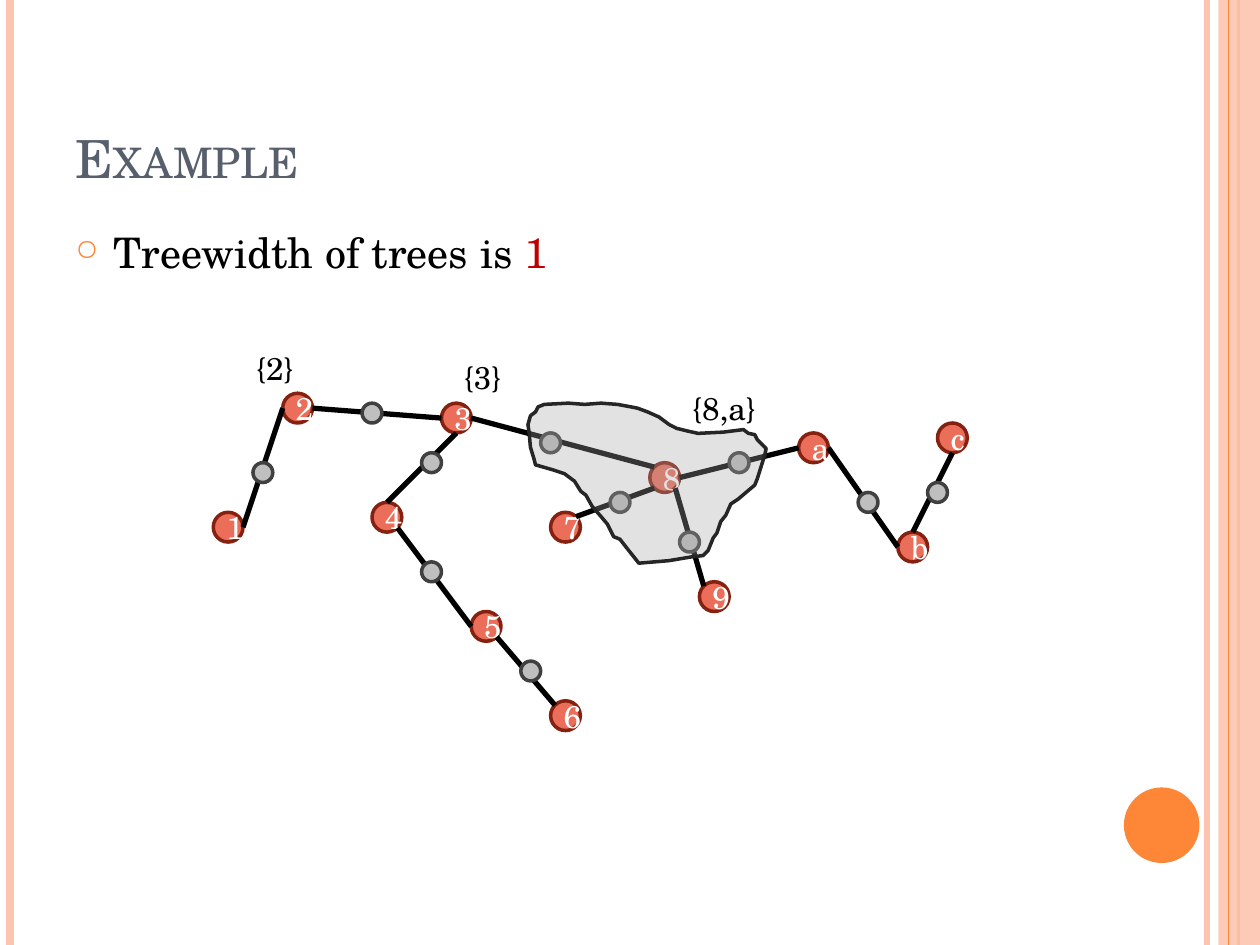
import math
import pptx
import pptx.util
import pptx.dml.color
import pptx.enum.shapes
import pptx.enum.text
import pptx.oxml
import pptx.oxml.ns
from lxml import etree

RGB = pptx.dml.color.RGBColor
PINK = RGB(0xFE, 0xC3, 0xAE)
ORANGE = RGB(0xFE, 0x86, 0x37)
SLATE = RGB(0x57, 0x5F, 0x6D)
CORAL = RGB(0xEB, 0x6E, 0x5A)
MAROON = RGB(0x86, 0x21, 0x10)
RED = RGB(0xC0, 0x00, 0x00)
SILVER = RGB(0xBF, 0xBF, 0xBF)
GREY = RGB(0xA6, 0xA6, 0xA6)
DARK = RGB(0x40, 0x40, 0x40)
INK = RGB(0x26, 0x26, 0x26)
BLACK = RGB(0, 0, 0)
WHITE = RGB(0xFF, 0xFF, 0xFF)
FONT = "TeX Gyre Schola"
MSO = pptx.enum.shapes.MSO_SHAPE
ANCHOR = pptx.enum.text.MSO_ANCHOR
ALIGN = pptx.enum.text.PP_ALIGN
qn = pptx.oxml.ns.qn

prs = pptx.Presentation()
prs.slide_width = W = pptx.util.Inches(10)
prs.slide_height = H = pptx.util.Inches(7.5)
s = prs.slides.add_slide(prs.slide_layouts[6])
GRID = pptx.util.Cm(0.2)
ROW_SHIFT = 0.14


def paint(sp, fill, line, width, alpha=100):
    sp.shadow.inherit = False
    sp.fill.solid()
    sp.fill.fore_color.rgb = fill
    if alpha < 100:
        clr = sp.fill._xPr.find(qn("a:solidFill"))[0]
        etree.SubElement(clr, qn("a:alpha"), val=str(alpha * 1000))
    if line is None:
        sp.line.fill.background()
    else:
        sp.line.color.rgb = line
        sp.line.width = pptx.util.Pt(width)
    return sp


def connect(x1, y1, x2, y2, color, width):
    cx = s.shapes.add_connector(pptx.enum.shapes.MSO_CONNECTOR.STRAIGHT,
                                round(x1), round(y1), round(x2), round(y2))
    cx.line.color.rgb = color
    cx.line.width = pptx.util.Pt(width)
    etree.SubElement(cx._element.spPr, qn("a:effectLst"))
    return cx


for share, color, width in [(0.958, PINK, 3), (0.008, PINK, 4.5), (0.983, ORANGE, 1.5)]:
    connect(W * share, 0, W * share, H, color, width)
band = s.shapes.add_shape(MSO.RECTANGLE, int(W * 0.967), 0, int(W * 0.033), H)
paint(band, PINK, None, 0, 87)
connect(W * 0.975, 0, W * 0.975, H, ORANGE, 0.75)
disc = s.shapes.add_shape(MSO.OVAL, int(W * 0.892), int(H * 0.8333), int(W * 0.06), int(W * 0.06))
paint(disc, ORANGE, None, 0)

texts = []
nodes = {
    "1": (23, 53), "2": (30, 41), "3": (46, 42), "7": (57, 53),
    "4": (39, 52), "6": (57, 72), "5": (49, 63), "9": (72, 60),
    "8": (67, 48), "c": (96, 44), "b": (92, 55), "a": (82, 45),
}
for name, (col, row) in nodes.items():
    sp = s.shapes.add_shape(MSO.OVAL, int((col - 1.5) * GRID),
                            int((row - 1.5 + ROW_SHIFT) * GRID), 3 * GRID, 3 * GRID)
    paint(sp, CORAL, MAROON, 2)
    texts.append((sp, [(name, WHITE)], 18, {"vertical_anchor": ANCHOR.MIDDLE, "word_wrap": True},
                  {"alignment": ALIGN.CENTER}))

edges = [
    ("4", 45, "5", 180), ("1", 0, "2", 180), ("4", 270, "3", 90), ("8", 225, "3", 0),
    ("8", 45, "9", 225), ("5", 45, "6", 225), ("a", 0, "b", 180), ("b", 270, "c", 90),
    ("2", 0, "3", 180), ("7", 315, "8", 135), ("8", 0, "a", 180),
]
for start, out_angle, end, in_angle in edges:
    ends = []
    for name, angle in [(start, out_angle), (end, in_angle)]:
        col, row = nodes[name]
        ends += [(col + 1.5 * math.cos(math.radians(angle))) * GRID,
                 (row + ROW_SHIFT + 1.5 * math.sin(math.radians(angle))) * GRID]
    connect(*ends, BLACK, 3)

dots = [(26, 47), (37, 41), (43, 46), (43, 57), (55, 44), (62, 50),
        (69, 54), (53, 67), (74, 46), (87, 50), (94, 49)]
for col, row in dots:
    sp = s.shapes.add_shape(MSO.OVAL, int((col - 0.5) * GRID),
                            int((row - 0.5 + ROW_SHIFT) * GRID), 2 * GRID, 2 * GRID)
    paint(sp, SILVER, DARK, 2)

boxes = [
    (0.05, 0.04, 0.817, 0.1667, [("Example", SLATE)], 30,
     {"vertical_anchor": ANCHOR.BOTTOM, "word_wrap": True}, {}),
    (0.05, 0.2333, 0.817, 0.7107, [("Treewidth of trees is ", BLACK), ("1", RED)], 24,
     {"word_wrap": True}, {"space_before": pptx.util.Pt(6)}),
    (0.193, 0.3627, 0.051, 0.0533, [("{2}", BLACK)], 18, {"word_wrap": False}, {}),
    (0.358, 0.372, 0.051, 0.0533, [("{3}", BLACK)], 18, {"word_wrap": False}, {}),
    (0.539, 0.4053, 0.072, 0.0533, [("{8,a}", BLACK)], 18, {"word_wrap": False}, {}),
]
for x, y, w, h, runs, size, frame, para in boxes:
    sp = s.shapes.add_textbox(int(W * x), int(H * y), int(W * w), int(H * h))
    texts.append((sp, runs, size, frame, para))

for sp, runs, size, frame, para in texts:
    tf = sp.text_frame
    p = tf.paragraphs[0]
    for target, values in [(tf, frame), (p, para)]:
        for key, value in values.items():
            setattr(target, key, value)
    for text, color in runs:
        r = p.add_run()
        r.text = text
        for key, value in {"name": FONT, "size": pptx.util.Pt(size)}.items():
            setattr(r.font, key, value)
        r.font.color.rgb = color
    if size == 30:
        r.font._element.set("cap", "small")
    if size == 24:
        pPr = p._p.get_or_add_pPr()
        pPr.set("marL", str(int(W * 0.03)))
        pPr.set("indent", str(int(W * -0.03)))
        clr = etree.SubElement(pPr, qn("a:buClr"))
        etree.SubElement(clr, qn("a:srgbClr"), val=str(ORANGE))
        etree.SubElement(pPr, qn("a:buSzPct"), val="70000")
        etree.SubElement(pPr, qn("a:buChar"), char="○")

outline = [
    (531, 337), (523, 331), (514, 327), (506, 324), (501, 323), (490, 321), (477, 320),
    (464, 321), (451, 320), (432, 321), (427, 323), (425, 327), (421, 330), (419, 337),
    (420, 344), (421, 355), (424, 365), (425, 369), (439, 373), (448, 376), (456, 382),
    (461, 390), (465, 393), (470, 402), (477, 410), (482, 416), (487, 426), (492, 428),
    (499, 437), (507, 447), (531, 445), (537, 444), (549, 442), (558, 441), (562, 437),
    (566, 427), (569, 423), (572, 414), (576, 409), (580, 400), (586, 396), (599, 385),
    (601, 380), (607, 361), (608, 356), (601, 349), (599, 345), (594, 344), (590, 341),
    (574, 343), (554, 344), (545, 342), (537, 340),
]
fb = s.shapes.build_freeform(*outline[0], scale=W / 1000)
fb.add_line_segments(outline[1:], close=True)
paint(fb.convert_to_shape(), GREY, INK, 2, 32)

prs.save("out.pptx")
